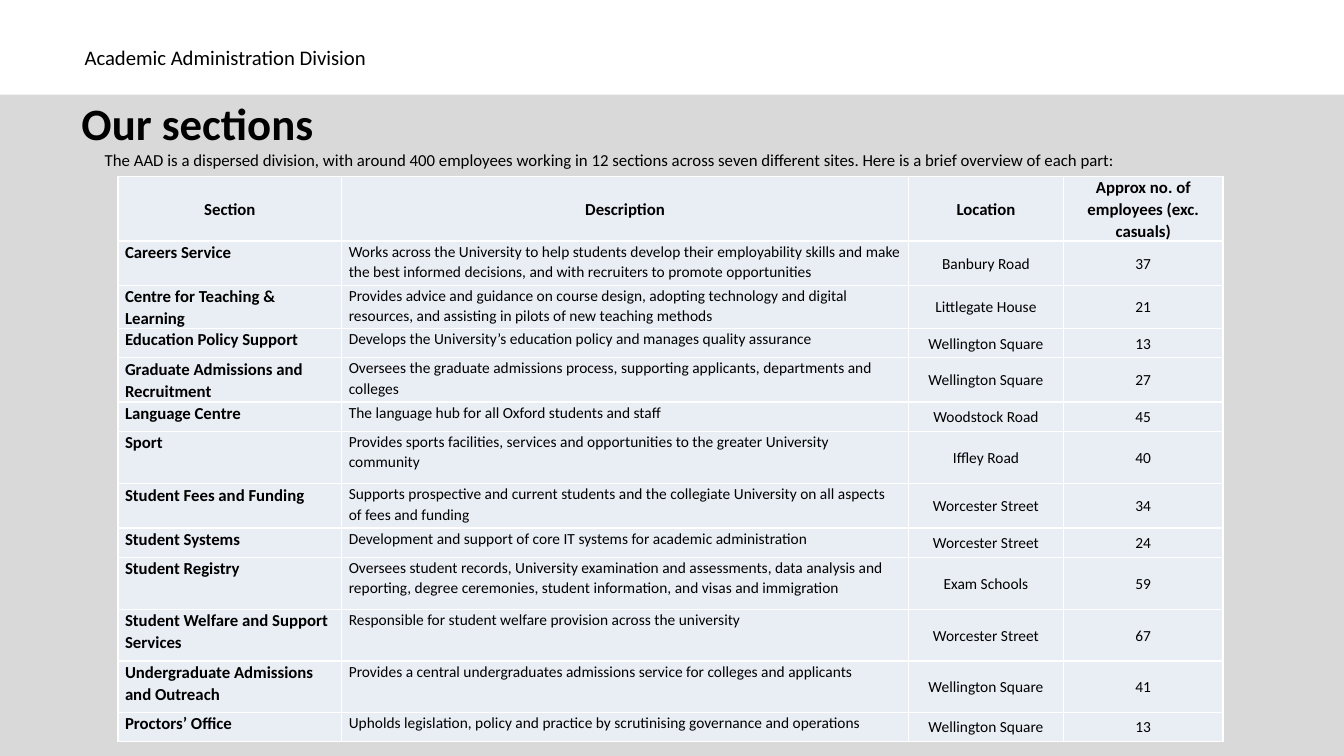
from lxml.etree import SubElement
from pptx import Presentation
from pptx.dml.color import RGBColor
from pptx.enum.shapes import MSO_SHAPE
from pptx.enum.text import MSO_ANCHOR, PP_ALIGN
from pptx.oxml.ns import qn
from pptx.util import Inches, Pt

BLACK = RGBColor(0x00, 0x00, 0x00)
WHITE = RGBColor(0xFF, 0xFF, 0xFF)
PANEL_GREY = RGBColor(0xD9, 0xD9, 0xD9)
CELL_BLUE = RGBColor(0xE9, 0xED, 0xF4)

COLUMN_WIDTHS = [2.22, 5.62, 1.54, 1.58]
HEADER_HEIGHT = 0.51
HEADINGS = ["Section", "Description", "Location", "Approx no. of employees (exc. casuals)"]
# Row height, then section, description, location, employees
SECTIONS = [
    (0.44, "Careers Service",
     "Works across the University to help students develop their employability skills and "
     "make the best informed decisions, and with recruiters to promote opportunities",
     "Banbury Road", "37"),
    (0.29, "Centre for Teaching & Learning",
     "Provides advice and guidance on course design, adopting technology and digital "
     "resources, and assisting in pilots of new teaching methods",
     "Littlegate House", "21"),
    (0.29, "Education Policy Support",
     "Develops the University’s education policy and manages quality assurance",
     "Wellington Square", "13"),
    (0.44, "Graduate Admissions and Recruitment",
     "Oversees the graduate admissions process, supporting applicants, departments and colleges",
     "Wellington Square", "27"),
    (0.29, "Language Centre",
     "The language hub for all Oxford students and staff",
     "Woodstock Road", "45"),
    (0.52, "Sport",
     "Provides sports facilities, services and opportunities to the greater University community",
     "Iffley Road", "40"),
    (0.44, "Student Fees and Funding",
     "Supports prospective and current students and the collegiate University on all aspects "
     "of fees and funding",
     "Worcester Street", "34"),
    (0.29, "Student Systems",
     "Development and support of core IT systems for academic administration",
     "Worcester Street", "24"),
    (0.52, "Student Registry",
     "Oversees student records, University examination and assessments, data analysis and "
     "reporting, degree ceremonies, student information, and visas and immigration",
     "Exam Schools", "59"),
    (0.51, "Student Welfare and Support Services",
     "Responsible for student welfare provision across the university",
     "Worcester Street", "67"),
    (0.51, "Undergraduate Admissions and Outreach",
     "Provides a central undergraduates admissions service for colleges and applicants",
     "Wellington Square", "41"),
    (0.29, "Proctors’ Office",
     "Upholds legislation, policy and practice by scrutinising governance and operations",
     "Wellington Square", "13"),
]


def add_span(para, text, size, bold=False):
    span = para.add_run()
    span.text = text
    span.font.name = "Calibri"
    span.font.size = Pt(size)
    span.font.bold = bold
    span.font.color.rgb = BLACK


def add_borders(cell):
    """Give the cell a white one-point line on each side."""
    properties = cell._tc.get_or_add_tcPr()
    for position, side in enumerate(["a:lnL", "a:lnR", "a:lnT", "a:lnB"]):
        line = SubElement(properties, qn(side), w=str(Pt(1)))
        fill = SubElement(line, qn("a:solidFill"))
        SubElement(fill, qn("a:srgbClr"), val=str(WHITE))
        properties.insert(position, line)


deck = Presentation()
deck.slide_width = Inches(13.33)
deck.slide_height = Inches(7.5)
page = deck.slides.add_slide(deck.slide_layouts[6])

panel = page.shapes.add_shape(
    MSO_SHAPE.RECTANGLE, Inches(0), Inches(0.94), Inches(13.33), Inches(6.56))
panel.shadow.inherit = False
panel.fill.solid()
panel.fill.fore_color.rgb = PANEL_GREY
panel.line.fill.background()

for left, top, width, height, text, size, bold, wrap in [
    (0.74, 0.39, 7.78, 0.35, "Academic Administration Division", 14.8, False, True),
    (0.71, 0.9, 12.34, 0.64, "Our sections", 32, True, True),
    (0.94, 1.44, 10.29, 0.3,
     "The AAD is a dispersed division, with around 400 employees working in 12 sections "
     "across seven different sites. Here is a brief overview of each part:", 12, False, False),
]:
    box = page.shapes.add_textbox(Inches(left), Inches(top), Inches(width), Inches(height))
    box.text_frame.word_wrap = wrap
    add_span(box.text_frame.paragraphs[0], text, size, bold)

rows = [(HEADER_HEIGHT, *HEADINGS), *SECTIONS]
table = page.shapes.add_table(
    len(rows), len(COLUMN_WIDTHS), Inches(1.17), Inches(1.75),
    Inches(sum(COLUMN_WIDTHS)), Inches(sum(row[0] for row in rows))).table
for column, width in zip(table.columns, COLUMN_WIDTHS):
    column.width = Inches(width)

for row_index, (height, *texts) in enumerate(rows):
    table.rows[row_index].height = Inches(height)
    for column_index, text in enumerate(texts):
        is_header = row_index == 0
        is_centred = is_header or column_index >= 2
        is_bold = is_header or column_index == 0
        cell = table.cell(row_index, column_index)
        cell.fill.solid()
        cell.fill.fore_color.rgb = CELL_BLUE
        add_borders(cell)
        cell.margin_left = cell.margin_right = Inches(0.07)
        cell.margin_top = cell.margin_bottom = Inches(0)
        cell.vertical_anchor = MSO_ANCHOR.MIDDLE if is_centred else MSO_ANCHOR.TOP
        para = cell.text_frame.paragraphs[0]
        para.alignment = PP_ALIGN.CENTER if is_centred else PP_ALIGN.LEFT
        para.line_spacing = 1.07
        add_span(para, text, 12 if is_bold else 11, is_bold)

deck.save("out.pptx")
